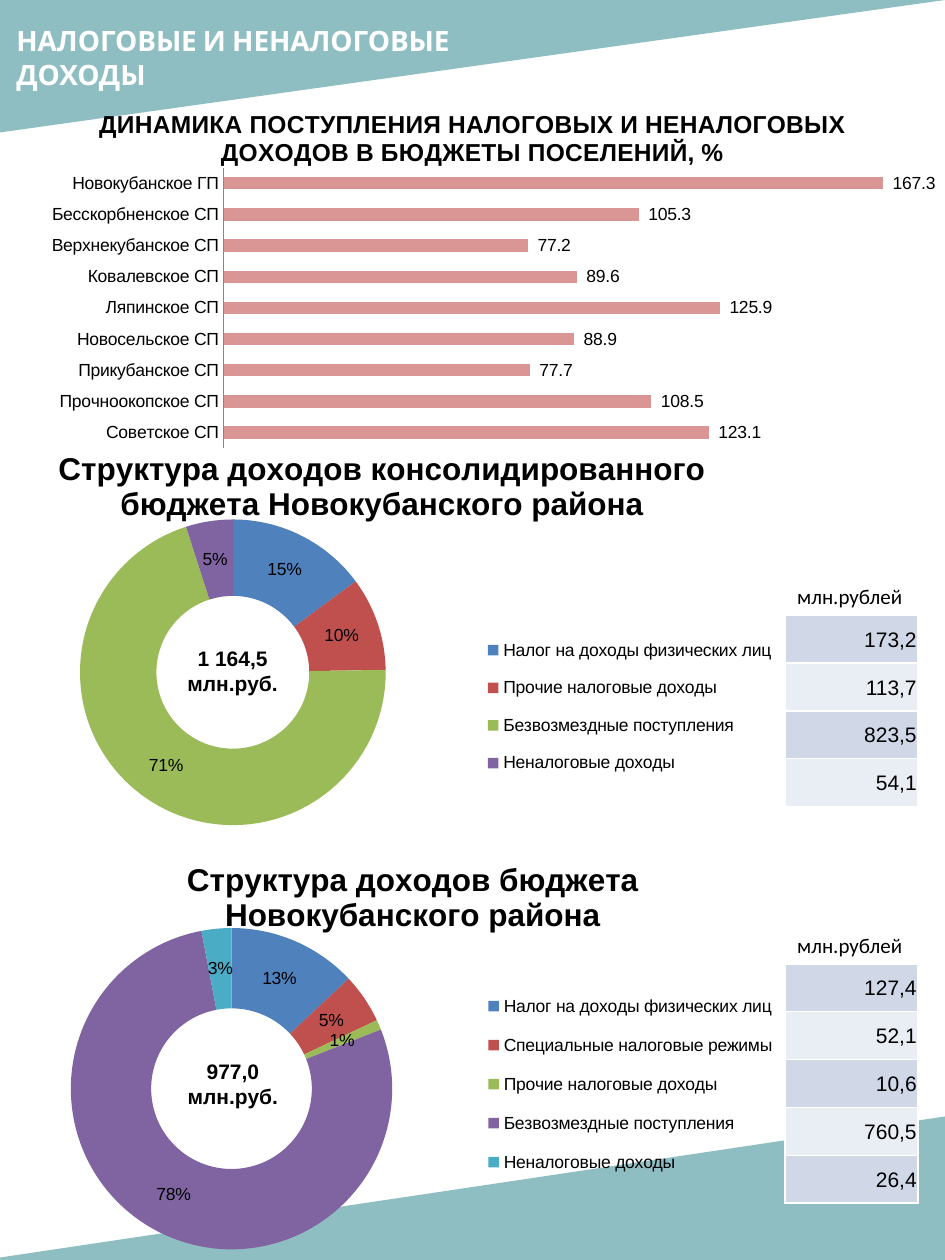
from lxml import etree
from pptx import Presentation
from pptx import oxml
from pptx import util as u
from pptx.chart.data import CategoryChartData
from pptx.dml.color import RGBColor
from pptx.enum import chart as ch, shapes, text
from pptx.oxml import ns

Cm, Pt = u.Cm, u.Pt
COLORS = {
    "teal": "519AA0", "white": "FFFFFF", "black": "000000", "axis": "868686",
    "bar": "D99694", "band": "D0D8E8", "light": "E9EDF4",
}
SLICES = ["4F81BD", "C0504D", "9BBB59", "8064A2", "4BACC6"]
SETTLEMENTS = {
    "Новокубанское ГП": 167.3, "Бесскорбненское СП": 105.3,
    "Верхнекубанское СП": 77.2, "Ковалевское СП": 89.6,
    "Ляпинское СП": 125.9, "Новосельское СП": 88.9,
    "Прикубанское СП": 77.7, "Прочноокопское СП": 108.5,
    "Советское СП": 123.1,
}
CONSOLIDATED = {
    "Налог на доходы физических лиц": 15, "Прочие налоговые доходы": 10,
    "Безвозмездные поступления": 71, "Неналоговые доходы": 5,
}
DISTRICT = {
    "Налог на доходы физических лиц": 13, "Специальные налоговые режимы": 5,
    "Прочие налоговые доходы": 1, "Безвозмездные поступления": 78,
    "Неналоговые доходы": 3,
}


def paint(fill, color):
    fill.solid()
    fill.fore_color.rgb = RGBColor.from_string(color)


def style(font, size, name="Arial", color="black", bold=False):
    font.size, font.name, font.bold = Pt(size), name, bold
    font.color.rgb = RGBColor.from_string(COLORS[color])


def add_triangle(page, area, turn):
    triangle = page.shapes.add_shape(shapes.MSO_SHAPE.RIGHT_TRIANGLE, *map(Cm, area))
    triangle.shadow.inherit = False
    paint(triangle.fill, COLORS["teal"])
    triangle.line.fill.background()
    triangle.rotation = 180
    triangle._element.spPr.find(ns.qn("a:xfrm")).set(turn, "1")
    color = triangle._element.spPr.find(".//" + ns.qn("a:srgbClr"))
    etree.SubElement(color, ns.qn("a:alpha"), val="64000")


def add_text(page, area, lines, size, align=text.PP_ALIGN.LEFT, wrap=True, **look):
    box = page.shapes.add_textbox(*map(Cm, area))
    frame = box.text_frame
    frame.word_wrap = wrap
    for index, line in enumerate(lines):
        para = frame.add_paragraph() if index else frame.paragraphs[0]
        para.alignment = align
        span = para.add_run()
        span.text = line
        style(span.font, size, **look)


def add_borders(cell):
    props = cell._tc.get_or_add_tcPr()
    for index, side in enumerate(("lnL", "lnR", "lnT", "lnB")):
        props.insert(index, oxml.parse_xml(
            f'<a:{side} {ns.nsdecls("a")} w="12700"><a:solidFill>'
            f'<a:srgbClr val="{COLORS["white"]}"/></a:solidFill></a:{side}>'))


def add_amounts(page, top, amounts):
    left, width, row = 15.82, 2.69, 0.965
    add_text(page, (left, top - 0.76, 2.62, 0.76), ["млн.рублей"], 12,
             wrap=False, name="Calibri")
    table = page.shapes.add_table(len(amounts), 1, Cm(left), Cm(top), Cm(width),
                                  Cm(row * len(amounts))).table
    table.first_row = False
    for index, amount in enumerate(amounts):
        table.rows[index].height = Cm(row)
        cell = table.cell(index, 0)
        paint(cell.fill, COLORS["light" if index % 2 else "band"])
        cell.vertical_anchor = text.MSO_ANCHOR.MIDDLE
        cell.margin_left = cell.margin_right = cell.margin_top = Cm(0.03)
        cell.margin_bottom = 0
        para = cell.text_frame.paragraphs[0]
        para.alignment = text.PP_ALIGN.RIGHT
        span = para.add_run()
        span.text = amount
        style(span.font, 12)
        add_borders(cell)


def place(parent, index, x, y, w=None, h=None, inner=False):
    for old in parent.findall(ns.qn("c:layout")):
        parent.remove(old)
    layout = etree.Element(ns.qn("c:layout"))
    manual = etree.SubElement(layout, ns.qn("c:manualLayout"))
    if inner:
        etree.SubElement(manual, ns.qn("c:layoutTarget"), val="inner")
    for name in ("xMode", "yMode"):
        etree.SubElement(manual, ns.qn("c:" + name), val="edge")
    for name, value in zip("xywh", (x, y, w, h)):
        if value is not None:
            etree.SubElement(manual, ns.qn("c:" + name), val=str(value))
    parent.insert(index, layout)


def add_chart(page, kind, area, values, title, size, title_at, plot_at):
    data = CategoryChartData()
    data.categories = list(values)
    data.add_series("Series 1", list(values.values()))
    chart = page.shapes.add_chart(kind, *map(Cm, area), data).chart
    style(chart.font, 10)
    space = chart._chartSpace
    space.find(ns.qn("c:txPr")).addprevious(oxml.parse_xml(
        f'<c:spPr {ns.nsdecls("c", "a")}><a:noFill/><a:ln><a:noFill/></a:ln></c:spPr>'))
    chart.has_title = True
    span = chart.chart_title.text_frame.paragraphs[0].add_run()
    span.text = title
    style(span.font, size, bold=True)
    place(chart.chart_title._element, 1, *title_at)
    place(space.find(".//" + ns.qn("c:plotArea")), 0, *plot_at, inner=True)
    plot = chart.plots[0]
    plot.has_data_labels = True
    labels = plot.data_labels
    labels.show_value = True
    labels.number_format_is_linked = False
    style(labels.font, 10)
    return chart


def add_bars(page):
    chart = add_chart(
        page, ch.XL_CHART_TYPE.BAR_CLUSTERED, (0, 1.75, 19.1, 7.59), SETTLEMENTS,
        "ДИНАМИКА ПОСТУПЛЕНИЯ НАЛОГОВЫХ И НЕНАЛОГОВЫХ ДОХОДОВ В БЮДЖЕТЫ ПОСЕЛЕНИЙ, %",
        14, (0.1, 0.045), (0.236, 0.215, 0.749, 0.745))
    chart.has_legend = False
    plot = chart.plots[0]
    plot.vary_by_categories = False
    plot.gap_width, plot.overlap = 150, -25
    plot.data_labels.number_format = r"#\ ##0.0"
    plot.data_labels.position = ch.XL_LABEL_POSITION.OUTSIDE_END
    paint(plot.series[0].format.fill, COLORS["bar"])
    names, scale = chart.category_axis, chart.value_axis
    names.reverse_order = True
    names.major_tick_mark = ch.XL_TICK_MARK.NONE
    paint(names.format.line.fill, COLORS["axis"])
    scale.visible = scale.has_major_gridlines = False
    scale.minimum_scale, scale.maximum_scale = 0, 180


def add_ring(page, area, values, title, title_at, plot_at, legend_at):
    chart = add_chart(page, ch.XL_CHART_TYPE.DOUGHNUT, area, values, title, 18,
                      title_at, plot_at)
    plot = chart.plots[0]
    plot.vary_by_categories = True
    plot.data_labels.show_percentage = False
    plot.data_labels.number_format = '0"%"'
    for index, color in enumerate(SLICES[:len(values)]):
        paint(plot.series[0].points[index].format.fill, color)
    chart.has_legend = True
    chart.legend.position = ch.XL_LEGEND_POSITION.RIGHT
    chart.legend.include_in_layout = False
    style(chart.legend.font, 10)
    place(chart.legend._element, 1, *legend_at)


def main():
    deck = Presentation()
    deck.slide_width, deck.slide_height = Cm(19.05), Cm(25.4)
    page = deck.slides.add_slide(deck.slide_layouts[6])
    add_triangle(page, (0, 0, 19.05, 2.67), "flipH")
    add_triangle(page, (-0.33, 22.5, 19.43, 2.9), "flipV")
    add_text(page, (0.08, 0.36, 11.46, 1.63), ["НАЛОГОВЫЕ И НЕНАЛОГОВЫЕ ДОХОДЫ"], 16,
             name="Cabin", color="white", bold=True)
    add_amounts(page, 12.4, ["173,2", "113,7", "823,5", "54,1"])
    add_amounts(page, 19.43, ["127,4", "52,1", "10,6", "760,5", "26,4"])
    add_bars(page)
    center = text.PP_ALIGN.CENTER
    add_ring(page, (-0.43, 8.31, 16.61, 8.48), CONSOLIDATED,
             "Структура доходов консолидированного бюджета Новокубанского района",
             (0.09, 0.07), (0.123, 0.254, 0.371, 0.729), (0.61, 0.5, 0.36, 0.4))
    add_text(page, (3.38, 12.88, 2.62, 1.27), ["1 164,5", "млн.руб."], 12, center, bold=True)
    add_ring(page, (0, 16.76, 16.61, 8.64), DISTRICT,
             "Структура доходов бюджета Новокубанского района",
             (0.22, 0.05), (0.086, 0.225, 0.39, 0.751), (0.58, 0.34, 0.37, 0.5))
    add_text(page, (3.45, 21.21, 2.49, 1.27), ["977,0", "млн.руб."], 12, center, bold=True)
    deck.save("out.pptx")


if __name__ == "__main__":
    main()
